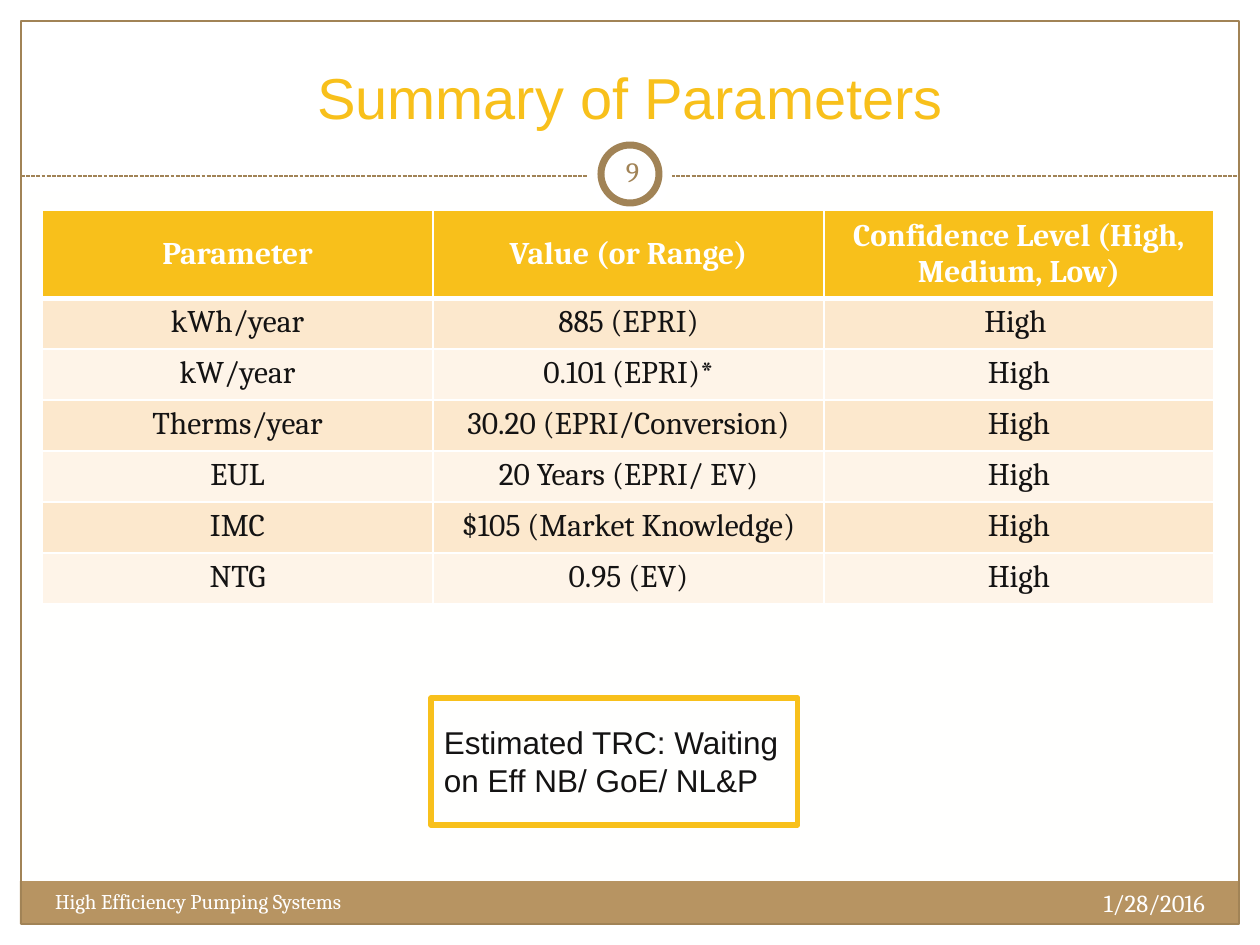
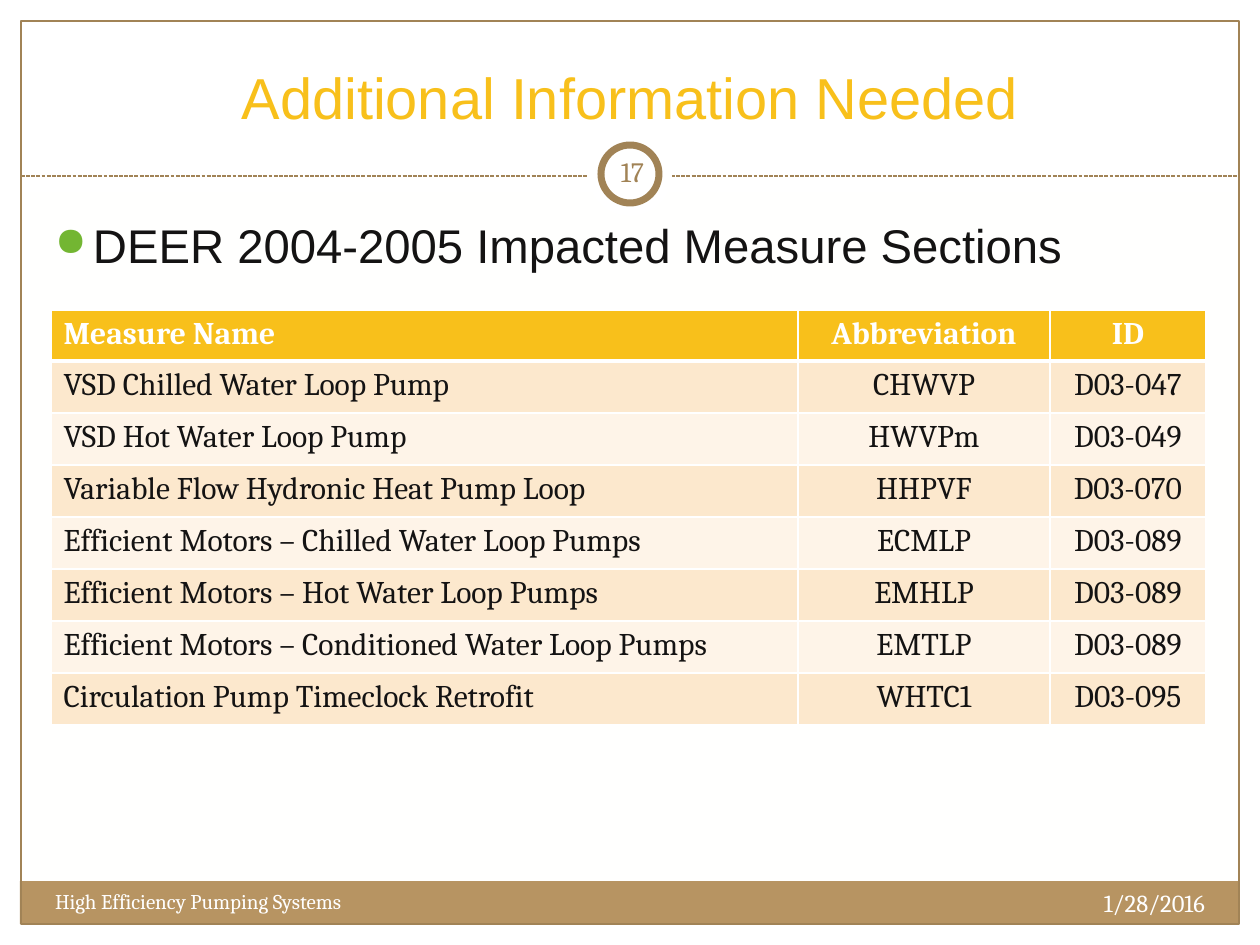
"""Build two slides on high efficiency pumping systems with a shared frame."""
from lxml.etree import SubElement
from pptx import Presentation
from pptx.dml.color import RGBColor
from pptx.enum.dml import MSO_LINE
from pptx.enum.shapes import MSO_CONNECTOR, MSO_SHAPE
from pptx.enum.text import MSO_ANCHOR, PP_ALIGN
from pptx.oxml import parse_xml
from pptx.oxml.ns import nsdecls, qn
from pptx.util import Emu, Pt

W, H, EDGE = 1260, 945, 21
C = {"paper": "FFFFFE", "white": "FFFFFF", "gold": "F8C01B", "tan": "B79462",
     "brown": "A18356", "ink": "141313", "green": "73B632",
     "odd": "FCE8CD", "even": "FEF4E8"}
HEAD, BODY = "Arial", "Cambria"
LEFT, CENTER, RIGHT = PP_ALIGN.LEFT, PP_ALIGN.CENTER, PP_ALIGN.RIGHT
TOP, MIDDLE, BOTTOM = MSO_ANCHOR.TOP, MSO_ANCHOR.MIDDLE, MSO_ANCHOR.BOTTOM
STYLES = {
    "title": dict(size=33, name=HEAD, color="gold"),
    "number": dict(size=16, name=BODY, color="brown"),
    "bullet": dict(size=27, name=HEAD, color="ink"),
    "note": dict(size=18, name=HEAD, color="ink"),
    "footer": dict(size=12, name=BODY, color="white"),
    "date": dict(size=14, name=BODY, color="white"),
    "header": dict(size=18, name=BODY, color="white", bold=True),
    "cell": dict(size=18, name=BODY, color="ink", bold=False),
}
FOOTER, DATE = "High Efficiency Pumping Systems", "1/28/2016"
MARGINS = [(0, 924, W, EDGE), (0, 0, W, 192), (0, 0, EDGE, H), (W - EDGE, 0, EDGE, H)]

SLIDES = [
    {"title": "Summary of Parameters", "number": "9",
     "note": "Estimated TRC: Waiting on Eff NB/ GoE/ NL&P",
     "table": {"at": (42, 210), "cols": [391, 391, 390], "head": 84, "row": 51,
               "first": CENTER, "anchor": MIDDLE, "rows": [
                   ("Parameter", "Value (or Range)", "Confidence Level (High, Medium, Low)"),
                   ("kWh/year", "885 (EPRI)", "High "),
                   ("kW/year", "0.101 (EPRI)*", "High"),
                   ("Therms/year", "30.20 (EPRI/Conversion)", "High"),
                   ("EUL", "20 Years (EPRI/ EV)", "High"),
                   ("IMC", "$105 (Market Knowledge)", "High"),
                   ("NTG", "0.95 (EV)", "High")]}},
    {"title": "Additional Information Needed", "number": "17",
     "bullet": "DEER 2004-2005 Impacted Measure Sections",
     "table": {"at": (51, 310), "cols": [747, 252, 156], "head": 51, "row": 52,
               "first": LEFT, "anchor": TOP, "rows": [
                   ("Measure Name", "Abbreviation", "ID"),
                   ("VSD Chilled Water Loop Pump", "CHWVP", "D03-047"),
                   ("VSD Hot Water Loop Pump", "HWVPm", "D03-049"),
                   ("Variable Flow Hydronic Heat Pump Loop", "HHPVF", "D03-070"),
                   ("Efficient Motors – Chilled Water Loop Pumps", "ECMLP", "D03-089"),
                   ("Efficient Motors – Hot Water Loop Pumps", "EMHLP", "D03-089"),
                   ("Efficient Motors – Conditioned Water Loop Pumps", "EMTLP", "D03-089"),
                   ("Circulation Pump Timeclock Retrofit", "WHTC1", "D03-095")]}},
]


def px(n):
    return Emu(round(n * 914400 / 126))


def rgb(name):
    return RGBColor.from_string(C[name])


def write(tf, text, style, align=LEFT):
    p = tf.paragraphs[0]
    p.alignment = align
    r = p.add_run()
    r.text = text
    fmt = dict(STYLES[style])
    r.font.color.rgb = rgb(fmt.pop("color"))
    fmt["size"] = Pt(fmt["size"])
    for key, value in fmt.items():
        setattr(r.font, key, value)
    return p


def set_frame(tf, anchor, pad_x, pad_y):
    fmt = {"word_wrap": True, "vertical_anchor": anchor,
           "margin_left": px(pad_x), "margin_right": px(pad_x),
           "margin_top": px(pad_y), "margin_bottom": px(pad_y)}
    for key, value in fmt.items():
        setattr(tf, key, value)


def add_text(s, box, text, style, align=LEFT, anchor=TOP, pad=(13, 6)):
    tf = s.shapes.add_textbox(*map(px, box)).text_frame
    set_frame(tf, anchor, *pad)
    return write(tf, text, style, align)


def add_box(s, box, fill=None, line=None, width=0.75, kind=MSO_SHAPE.RECTANGLE):
    sp = s.shapes.add_shape(kind, *map(px, box))
    sp.shadow.inherit = False
    if fill:
        sp.fill.solid()
        sp.fill.fore_color.rgb = rgb(fill)
    else:
        sp.fill.background()
    if line:
        sp.line.color.rgb = rgb(line)
        sp.line.width = Pt(width)
    else:
        sp.line.fill.background()
    return sp


def add_frame(s, title, number):
    s.background.fill.solid()
    s.background.fill.fore_color.rgb = rgb("paper")
    for box in MARGINS:
        add_box(s, box, "white")
    add_box(s, (20, 881, 1218, 43), "tan")
    add_box(s, (EDGE, EDGE, W - 2 * EDGE, 903), line="brown")
    rule = s.shapes.add_connector(MSO_CONNECTOR.STRAIGHT, px(EDGE), px(176), px(W - EDGE), px(176))
    rule.line.color.rgb = rgb("brown")
    rule.line.width = Pt(0.75)
    rule.line.dash_style = MSO_LINE.SQUARE_DOT
    SubElement(rule.line._get_or_add_ln().getparent(), qn("a:effectLst"))
    add_box(s, (588, 132, 84, 84), "white", kind=MSO_SHAPE.OVAL)
    add_box(s, (601, 145, 58, 58), "white", "brown", 4, MSO_SHAPE.OVAL)
    add_text(s, (42, 32, 1176, 105), title, "title", CENTER, BOTTOM)
    add_text(s, (601, 141, 63, 60), number, "number", CENTER, MIDDLE, (6, 6))
    add_text(s, (42, 883, 788, 34), FOOTER, "footer")
    add_text(s, (798, 882, 420, 50), DATE, "date", RIGHT)


def add_bullet(s, text):
    p = add_text(s, (42, 210, 1172, 83), text, "bullet")
    pPr = p._p.get_or_add_pPr()
    pPr.set("marL", str(px(38)))
    pPr.set("indent", str(-px(38)))
    color = SubElement(pPr, qn("a:buClr"))
    SubElement(color, qn("a:srgbClr"), val=C["green"])
    SubElement(pPr, qn("a:buSzPct"), val="85000")
    SubElement(pPr, qn("a:buChar"), char="●")


def add_note(s, text):
    sp = add_box(s, (431, 698, 367, 127), line="gold", width=3)
    set_frame(sp.text_frame, TOP, 13, 25)
    write(sp.text_frame, text, "note")


def set_borders(cell, row):
    top, bottom = 3 if row == 1 else 1, 3 if row == 0 else 1
    tcPr = cell._tc.get_or_add_tcPr()
    for i, (side, width) in enumerate({"L": 1, "R": 1, "T": top, "B": bottom}.items()):
        tcPr.insert(i, parse_xml(
            f'<a:ln{side} {nsdecls("a")} w="{Pt(width)}"><a:solidFill>'
            f'<a:srgbClr val="{C["white"]}"/></a:solidFill></a:ln{side}>'))


def add_grid(s, at, cols, head, row, first, anchor, rows):
    heights = [head] + [row] * (len(rows) - 1)
    size = (sum(cols), sum(heights))
    table = s.shapes.add_table(len(rows), len(cols), *map(px, at + size)).table
    for col, width in zip(table.columns, cols):
        col.width = px(width)
    for i, values in enumerate(rows):
        table.rows[i].height = px(heights[i])
        fill = "gold" if i == 0 else "odd" if i % 2 else "even"
        for j, value in enumerate(values):
            cell = table.cell(i, j)
            cell.fill.solid()
            cell.fill.fore_color.rgb = rgb(fill)
            cell.vertical_anchor = TOP if i else anchor
            write(cell.text_frame, value, "cell" if i else "header", CENTER if j else first)
            set_borders(cell, i)


def main():
    prs = Presentation()
    prs.slide_width, prs.slide_height = px(W), px(H)
    for data in SLIDES:
        s = prs.slides.add_slide(prs.slide_layouts[6])
        add_frame(s, data["title"], data["number"])
        if "bullet" in data:
            add_bullet(s, data["bullet"])
        add_grid(s, **data["table"])
        if "note" in data:
            add_note(s, data["note"])
    prs.save("out.pptx")


if __name__ == "__main__":
    main()
